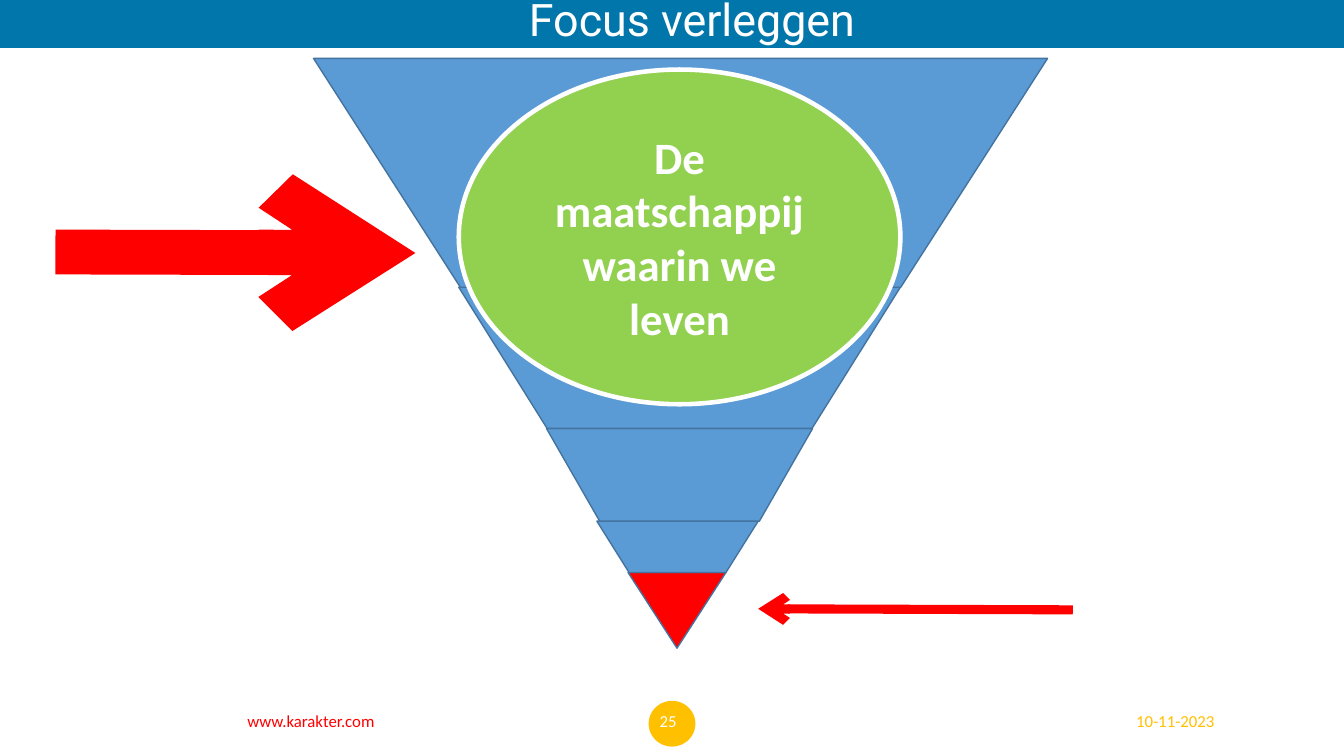
from pptx import Presentation
from pptx.dml.color import RGBColor
from pptx.enum.shapes import MSO_CONNECTOR as Line, MSO_SHAPE as Kind
from pptx.enum.text import MSO_ANCHOR as Anchor, PP_ALIGN as Align
from pptx.oxml.ns import qn
from pptx.util import Pt
from lxml.etree import SubElement as Sub

PX = 9144  # one hundredth of an inch
THEME = {
    "bar": "0076AB", "gold": "FFC000", "red": "FF0000", "white": "FFFFFF",
    "blue": "5B9BD5", "edge": "43739E", "green": "92D050",
    "body": "Calibri", "head": "Roboto", "big": 32, "small": 12,
}


def shape(kind, box, fill, edge, width=1):
    item = slide.shapes.add_shape(kind, *[n * PX for n in box])
    item.shadow.inherit = False
    item.fill.solid()
    item.fill.fore_color.rgb = RGBColor.from_string(THEME[fill])
    item.line.color.rgb = RGBColor.from_string(THEME[edge])
    item.line.width = Pt(width)
    return item


def write(item, text, size, color, align, font="body", bold=False, anchor=Anchor.MIDDLE):
    frame = item.text_frame
    frame.word_wrap = True
    frame.vertical_anchor = anchor
    para = frame.paragraphs[0]
    para.alignment = align
    run = para.add_run()
    run.text = text
    run.font.name = THEME[font]
    run.font.size = Pt(THEME[size])
    run.font.bold = bold
    run.font.color.rgb = RGBColor.from_string(THEME[color])


deck = Presentation()
deck.slide_width, deck.slide_height = 1333 * PX, 750 * PX
slide = deck.slides.add_slide(deck.slide_layouts[5])

# Header bar and title
shape(Kind.OVAL, (644, 696, 45, 44), "gold", "gold")
shape(Kind.RECTANGLE, (0, 0, 1333, 47), "bar", "bar")
title = slide.shapes.title
title.left, title.top, title.width, title.height = [n * PX for n in (480, -13, 413, 64)]
write(title, "Focus verleggen", "big", "white", Align.CENTER, "head", anchor=Anchor.TOP)
title.element.getparent().append(title.element)  # in front of the bar

# Footer
for box, text, color, align in (
    ((1117, 695, 124, 40), "10-11-2023", "gold", Align.LEFT),
    ((92, 695, 433, 40), "www.karakter.com", "red", Align.CENTER),
    ((630, 694, 51, 42), "25", "white", Align.RIGHT),
):
    note = slide.shapes.add_textbox(*[n * PX for n in box])
    write(note, text, "small", color, align)

# Funnel, from the tip upwards
shape(Kind.FLOWCHART_MERGE, (623, 568, 97, 75), "red", "edge")
base = 568
for left, width, high in ((592, 160, 51), (542, 264, 92), (455, 438, 140), (311, 728, 227)):
    base -= high
    shape(Kind.FLOWCHART_MANUAL_OPERATION, (left, base, width, high), "blue", "edge")

# Arrows
for ends, width in (((55, 250, 412, 251), 32), ((1064, 605, 752, 604), 6.5)):
    arrow = slide.shapes.add_connector(Line.STRAIGHT, *[n * PX for n in ends])
    arrow.line.color.rgb = RGBColor.from_string(THEME["red"])
    arrow.line.width = Pt(width)
    Sub(arrow.line._get_or_add_ln(), qn("a:tailEnd"), type="arrow")
    Sub(arrow.element.spPr, qn("a:effectLst"))

# Focus
focus = shape(Kind.OVAL, (455, 69, 438, 332), "green", "white", 3.25)
write(focus, "De maatschappij waarin we leven", "big", "white", Align.CENTER, bold=True)

deck.save("out.pptx")
